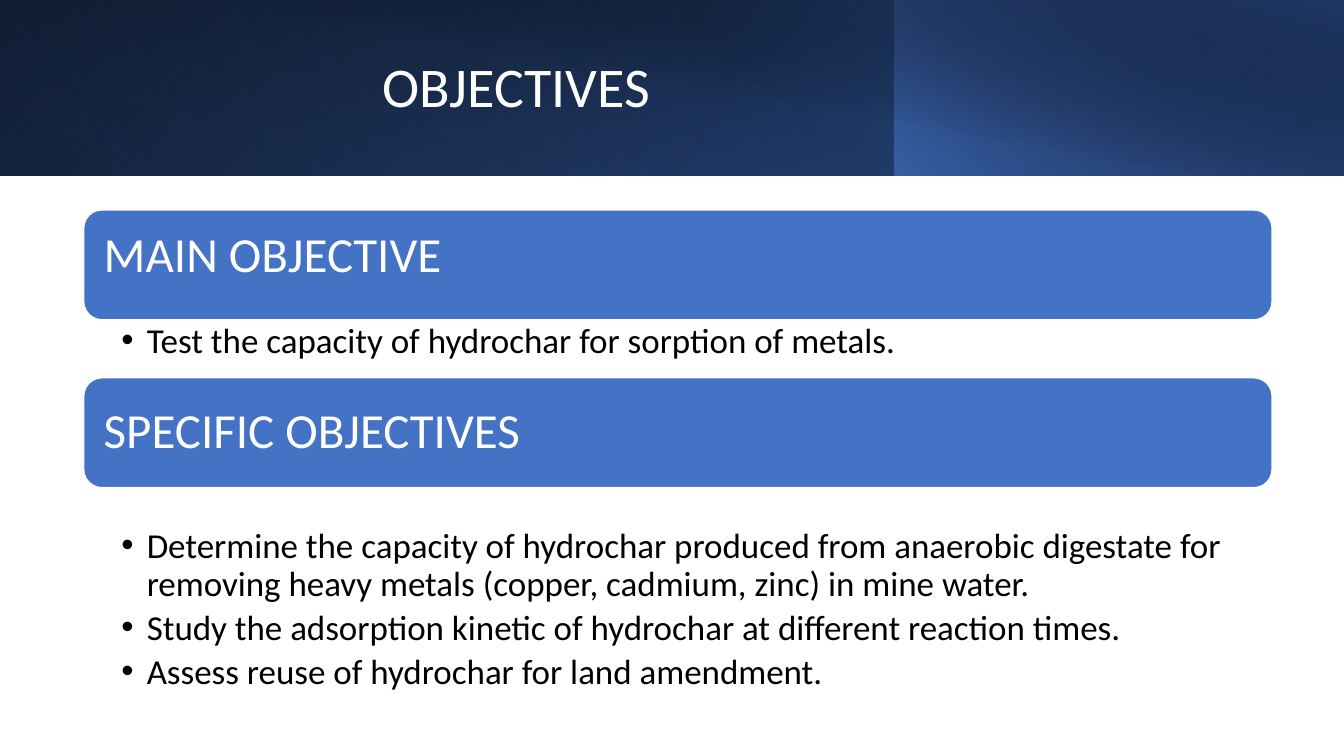
from lxml import etree
from pptx import Presentation
from pptx.dml.color import RGBColor
from pptx.enum.shapes import MSO_SHAPE
from pptx.enum.text import MSO_ANCHOR, PP_ALIGN
from pptx.oxml.ns import qn
from pptx.util import Cm, Pt

FONT = "Calibri"
WHITE = RGBColor(0xFF, 0xFF, 0xFF)
BLACK = RGBColor(0x00, 0x00, 0x00)
BLUE = RGBColor(0x44, 0x72, 0xC4)
MID_BLUE = RGBColor(0x2F, 0x55, 0x97)
NAVY = RGBColor(0x20, 0x38, 0x64)

SLIDE_WIDTH, SLIDE_HEIGHT = 33.87, 19.05
BANNER_HEIGHT = 4.43
SPLIT = 22.54  # where the right part of the banner begins
LEFT, WIDTH = 2.11, 29.95  # column of headings and bullets
HEADING_HEIGHT = 2.77


def add_gradient(page, left, width, angle, stops, flip=True, rotation=0):
    """Banner layer; each stop is position %, colour, opacity %."""
    layer = page.shapes.add_shape(
        MSO_SHAPE.RECTANGLE, Cm(left), 0, Cm(width), Cm(BANNER_HEIGHT))
    layer.shadow.inherit = False
    layer.line.fill.background()
    layer.rotation = rotation
    properties = layer._element.spPr
    if flip:
        properties.find(qn("a:xfrm")).set("flipH", "1")
    gradient = etree.Element(qn("a:gradFill"), rotWithShape="1")
    stop_list = etree.SubElement(gradient, qn("a:gsLst"))
    for position, colour, opacity in stops:
        stop = etree.SubElement(stop_list, qn("a:gs"), pos=str(position * 1000))
        shade = etree.SubElement(stop, qn("a:srgbClr"), val=str(colour))
        if opacity < 100:
            etree.SubElement(shade, qn("a:alpha"), val=str(opacity * 1000))
    etree.SubElement(gradient, qn("a:lin"), ang=str(angle * 60000), scaled="0")
    properties.find(qn("a:prstGeom")).addnext(gradient)


def set_frame(box, anchor, left, top, right, bottom):
    frame = box.text_frame
    frame.word_wrap = True
    frame.vertical_anchor = anchor
    frame.margin_left, frame.margin_top = Cm(left), Cm(top)
    frame.margin_right, frame.margin_bottom = Cm(right), Cm(bottom)
    return frame


def write(para, text, size, colour, align=PP_ALIGN.LEFT):
    para.alignment = align
    para.line_spacing = 0.9
    span = para.add_run()
    span.text = text
    span.font.name = FONT
    span.font.size = Pt(size)
    span.font.color.rgb = colour


def add_title(page, text):
    box = page.shapes.add_textbox(Cm(3.81), Cm(0.81), Cm(18.72), Cm(2.87))
    frame = set_frame(box, MSO_ANCHOR.MIDDLE, 0.25, 0.13, 0.25, 0.13)
    write(frame.paragraphs[0], text, 40, WHITE, PP_ALIGN.CENTER)


def add_heading(page, top, text, anchor):
    bar = page.shapes.add_shape(
        MSO_SHAPE.ROUNDED_RECTANGLE,
        Cm(LEFT), Cm(top), Cm(WIDTH), Cm(HEADING_HEIGHT))
    bar.shadow.inherit = False
    bar.fill.solid()
    bar.fill.fore_color.rgb = BLUE
    bar.line.color.rgb = WHITE
    bar.line.width = Pt(1)
    frame = set_frame(bar, anchor, 0.37, 0.37, 0.37, 0.37)
    write(frame.paragraphs[0], text, 35, WHITE)


def add_bullets(page, top, height, items):
    box = page.shapes.add_textbox(Cm(LEFT), Cm(top), Cm(WIDTH), Cm(height))
    frame = set_frame(box, MSO_ANCHOR.TOP, 0.95, 0.08, 0.48, 0.08)
    for index, item in enumerate(items):
        para = frame.add_paragraph() if index else frame.paragraphs[0]
        write(para, item, 25, BLACK)
        para.space_after = Pt(4.5)
        settings = para._p.get_or_add_pPr()
        settings.set("marL", str(Cm(0.64)))
        settings.set("indent", str(-Cm(0.64)))
        etree.SubElement(settings, qn("a:buFont"), typeface="Arial")
        etree.SubElement(settings, qn("a:buChar"), char="•")


def main():
    deck = Presentation()
    deck.slide_width, deck.slide_height = Cm(SLIDE_WIDTH), Cm(SLIDE_HEIGHT)
    page = deck.slides.add_slide(deck.slide_layouts[6])

    # Banner: layered gradients
    add_gradient(page, 0, SLIDE_WIDTH, 140,
                 [(0, BLACK, 100), (100, MID_BLUE, 100)])
    add_gradient(page, 0, SPLIT, 230,
                 [(20, BLUE, 0), (100, NAVY, 55)], rotation=180)
    add_gradient(page, SPLIT, SLIDE_WIDTH - SPLIT, 220,
                 [(0, BLUE, 66), (100, BLACK, 30)])
    add_gradient(page, 1.27, SLIDE_WIDTH - 1.27, 280,
                 [(50, BLACK, 0), (99, NAVY, 52)], flip=False)
    add_title(page, "OBJECTIVES ")

    # Main objective
    add_heading(page, 5.29, "MAIN OBJECTIVE", MSO_ANCHOR.TOP)
    add_bullets(page, 8.06, 2.44, [
        "Test the capacity of hydrochar for sorption of metals.",
    ])

    # Specific objectives
    add_heading(page, 9.52, "SPECIFIC OBJECTIVES", MSO_ANCHOR.MIDDLE)
    add_bullets(page, 13.23, 4.5, [
        "Determine the capacity of hydrochar produced from anaerobic digestate "
        "for removing heavy metals (copper, cadmium, zinc) in mine water.",
        "Study the adsorption kinetic of hydrochar at different reaction times.",
        "Assess reuse of hydrochar for land amendment.",
    ])

    deck.save("out.pptx")


if __name__ == "__main__":
    main()
